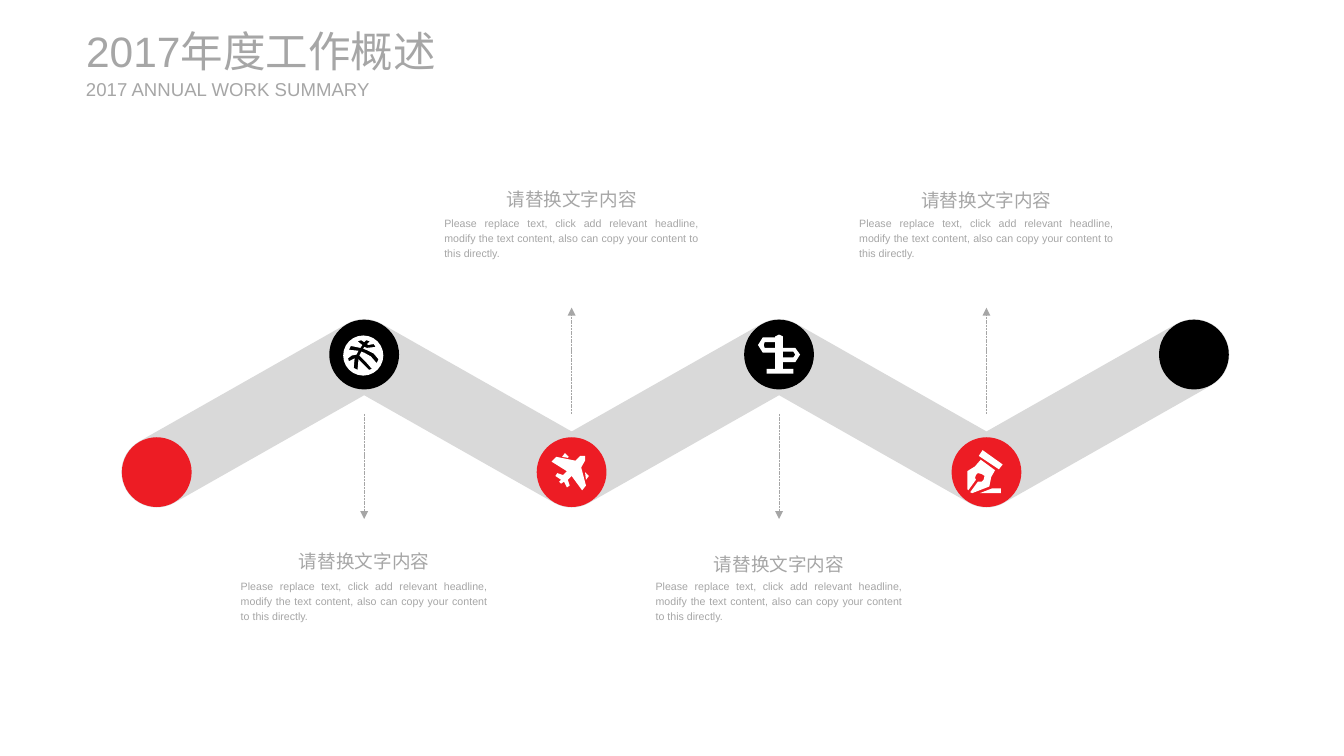
from dataclasses import dataclass
from math import atan2, cos, pi, sin

from lxml import etree
from pptx import Presentation
from pptx.dml.color import RGBColor
from pptx.enum.dml import MSO_LINE
from pptx.enum.shapes import MSO_CONNECTOR, MSO_SHAPE
from pptx.enum.text import MSO_ANCHOR, MSO_AUTO_SIZE, PP_ALIGN
from pptx.oxml.ns import qn
from pptx.util import Inches, Pt

OVAL = MSO_SHAPE.OVAL
STRAIGHT = MSO_CONNECTOR.STRAIGHT
SHORT_DASH = MSO_LINE.SQUARE_DOT
FIT_SHAPE = MSO_AUTO_SIZE.SHAPE_TO_FIT_TEXT
LEFT, CENTER, JUSTIFY = PP_ALIGN.LEFT, PP_ALIGN.CENTER, PP_ALIGN.JUSTIFY
TOP, MIDDLE = MSO_ANCHOR.TOP, MSO_ANCHOR.MIDDLE


@dataclass(frozen=True)
class Theme:
    font: str = "Arial"
    gray: str = "A6A6A6"
    band: str = "D9D9D9"
    red: str = "ED1C24"
    black: str = "000000"
    white: str = "FFFFFF"
    title: int = 32
    heading: int = 14
    body: int = 8
    arrow: float = 0.5


class Page:
    def __init__(self, slide, theme):
        self.shapes = slide.shapes
        self.theme = theme

    def paint(self, shape, color):
        shape.shadow.inherit = False
        shape.fill.solid()
        shape.fill.fore_color.rgb = RGBColor.from_string(color)
        shape.line.fill.background()

    def disc(self, x, y, diameter, color):
        corner = Inches(x - diameter / 2), Inches(y - diameter / 2)
        self.paint(self.shapes.add_shape(OVAL, *corner, Inches(diameter), Inches(diameter)), color)

    def outline(self, contours, color):
        """Draw closed contours as one shape; a contour inside another is a hole."""
        builder = None
        for contour in contours:
            points = [(Inches(x), Inches(y)) for x, y in contour]
            if builder is None:
                builder = self.shapes.build_freeform(*points[0])
            else:
                builder.move_to(*points[0])
            builder.add_line_segments(points[1:], close=True)
        self.paint(builder.convert_to_shape(), color)

    def arrow(self, x, start, end):
        line = self.shapes.add_connector(STRAIGHT, Inches(x), Inches(start), Inches(x), Inches(end))
        line.line.color.rgb = RGBColor.from_string(self.theme.gray)
        line.line.width = Pt(self.theme.arrow)
        line.line.dash_style = SHORT_DASH
        properties = line._element.spPr
        etree.SubElement(properties.find(qn("a:ln")), qn("a:tailEnd"), type="triangle")
        etree.SubElement(properties, qn("a:effectLst"))

    def text(self, words, left, top, width, height, size, align=LEFT,
             anchor=TOP, wrap=True, margin=None, spacing=None):
        box = self.shapes.add_textbox(Inches(left), Inches(top), Inches(width), Inches(height))
        frame = box.text_frame
        frame.text = words
        frame.word_wrap = wrap
        frame.auto_size = FIT_SHAPE
        frame.vertical_anchor = anchor
        if margin is not None:
            frame.margin_left = frame.margin_right = Inches(margin)
            frame.margin_top = frame.margin_bottom = Inches(margin)
        para = frame.paragraphs[0]
        para.alignment = align
        if spacing:
            para.line_spacing = spacing
        font = para.runs[0].font
        font.name = self.theme.font
        font.size = Pt(size)
        font.color.rgb = RGBColor.from_string(self.theme.gray)


def arc(x, y, radius, start, end, steps=24):
    angles = [start + (end - start) * i / steps for i in range(steps + 1)]
    return [(x + radius * cos(a), y - radius * sin(a)) for a in angles]


def zigzag(stops, radius):
    """Outline a band along the stops: round outer bends, sharp inner bends, round ends."""
    (x0, low), (x1, high) = stops[:2]
    slope = atan2(low - high, x1 - x0)
    inner = radius / cos(slope)
    upper, lower = [], []
    for x, y in stops[1:-1]:
        if y == high:
            upper += arc(x, y, radius, pi / 2 + slope, pi / 2 - slope)
            lower.append((x, y + inner))
        else:
            upper.append((x, y - inner))
            lower += arc(x, y, radius, -pi / 2 - slope, -pi / 2 + slope)
    start_cap = arc(*stops[0], radius, slope + 1.5 * pi, slope + pi / 2)
    end_cap = arc(*stops[-1], radius, slope + pi / 2, slope - pi / 2)
    return start_cap + upper + end_cap + lower[::-1]


BALL = [
    arc(3.8, 3.72, 0.21, 0, 2 * pi),
    [(3.67, 3.62), (3.65, 3.66), (3.75, 3.67), (3.73, 3.71), (3.68, 3.72), (3.64, 3.75),
     (3.65, 3.78), (3.71, 3.75), (3.7, 3.85), (3.74, 3.87), (3.75, 3.76), (3.8, 3.81),
     (3.86, 3.87), (3.89, 3.86), (3.83, 3.79), (3.76, 3.72), (3.78, 3.68), (3.81, 3.69),
     (3.88, 3.73), (3.94, 3.8), (3.96, 3.76), (3.91, 3.7), (3.83, 3.66), (3.8, 3.65),
     (3.81, 3.63), (3.84, 3.64), (3.93, 3.63), (3.91, 3.6), (3.85, 3.61), (3.84, 3.6),
     (3.87, 3.57), (3.83, 3.56), (3.81, 3.58), (3.78, 3.56), (3.74, 3.57), (3.79, 3.61),
     (3.77, 3.64)],
]
SIGNPOST = [
    [(8.19, 3.64), (8.32, 3.64), (8.37, 3.71), (8.32, 3.79), (8.19, 3.79), (8.19, 3.86),
     (8.3, 3.86), (8.3, 3.91), (8.02, 3.91), (8.02, 3.86), (8.11, 3.86), (8.11, 3.69),
     (7.98, 3.69), (7.93, 3.61), (7.98, 3.53), (8.11, 3.53), (8.11, 3.52), (8.15, 3.5),
     (8.19, 3.52)],
    [(8.11, 3.58), (8, 3.58), (7.99, 3.61), (8, 3.64), (8.11, 3.64)],
    [(8.3, 3.68), (8.19, 3.68), (8.19, 3.74), (8.3, 3.74), (8.32, 3.71)],
]
PLANE = [
    [(6.12, 4.77), (6.12, 4.82), (6.08, 4.89), (6.13, 5.08), (6.09, 5.13), (5.98, 4.98),
     (5.94, 5.02), (5.96, 5.08), (5.93, 5.1), (5.9, 5.04), (5.87, 5.06), (5.85, 5.04),
     (5.87, 5.02), (5.81, 4.98), (5.83, 4.95), (5.89, 4.97), (5.93, 4.93), (5.77, 4.83),
     (5.82, 4.78), (6.02, 4.82), (6.07, 4.77)],
    [(6.16, 4.98), (6.12, 4.94), (6.13, 5.02)],
    [(5.91, 4.74), (5.88, 4.78), (5.94, 4.79), (5.95, 4.78)],
]
PEN = [
    [(10.13, 5.13), (10.12, 5.12), (10.12, 4.93), (10.2, 4.88), (10.26, 4.81), (10.41, 4.92),
     (10.37, 4.99), (10.35, 5.09), (10.17, 5.16), (10.15, 5.15), (10.23, 5.04), (10.27, 5.04),
     (10.29, 5.02), (10.3, 4.98), (10.27, 4.96), (10.23, 4.95), (10.21, 4.97), (10.2, 5),
     (10.21, 5.02)],
    [(10.25, 5.16), (10.47, 5.16), (10.47, 5.11), (10.38, 5.11)],
    [(10.45, 4.91), (10.49, 4.86), (10.28, 4.71), (10.24, 4.77)],
]

HEADING = "请替换文字内容"
BODY = ("Please replace text, click add relevant headline, modify the text content, "
        "also can copy your content to this directly.")
STOPS = [(1.64 + 2.17 * i, 3.71 if i % 2 else 4.94) for i in range(6)]
# stop number, arrow end, heading top, body top, body width
NOTES = [(1, 5.43, 5.66, 5.99, 2.78), (2, 3.22, 1.87, 2.19, 2.86),
         (3, 5.43, 5.69, 5.99, 2.78), (4, 3.22, 1.88, 2.19, 2.86)]


def main():
    deck = Presentation()
    deck.slide_width, deck.slide_height = Inches(14.06), Inches(7.91)
    theme = Theme()
    page = Page(deck.slides.add_slide(deck.slide_layouts[6]), theme)

    page.outline([zigzag(STOPS, 0.37)], theme.band)
    for number, (x, y) in enumerate(STOPS):
        page.disc(x, y, 0.73, theme.black if number % 2 else theme.red)
    for icon in (BALL, SIGNPOST, PLANE, PEN):
        page.outline(icon, theme.white)

    for number, arrow_end, heading_top, body_top, width in NOTES:
        x = STOPS[number][0]
        page.arrow(x, 4.33, arrow_end)
        page.text(HEADING, x - 0.79, heading_top, 1.58, 0.36, theme.heading,
                  CENTER, wrap=False, spacing=1.2)
        page.text(BODY, x - width / 2, body_top, width, 0.57, theme.body, JUSTIFY, spacing=1.2)

    page.text("2017年度工作概述", 0.9, 0.26, 4.32, 0.54, theme.title, anchor=MIDDLE, margin=0)
    page.text("2017 ANNUAL WORK SUMMARY", 0.9, 0.81, 3.07, 0.24, theme.heading,
              anchor=MIDDLE, margin=0)
    deck.save("out.pptx")


if __name__ == "__main__":
    main()
